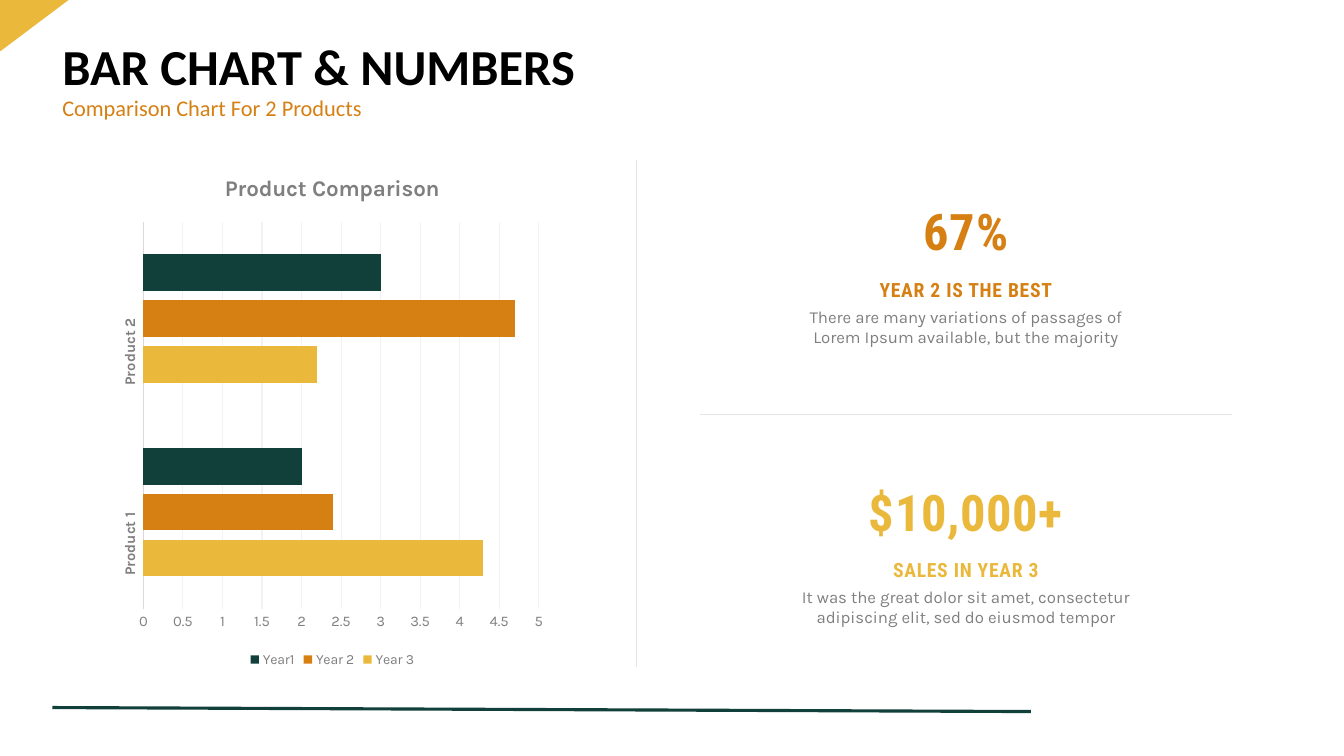
from dataclasses import dataclass

from lxml import etree
from pptx import Presentation
from pptx.chart.data import CategoryChartData
from pptx.dml.color import RGBColor
from pptx.enum.chart import XL_CHART_TYPE, XL_LEGEND_POSITION, XL_TICK_MARK
from pptx.enum.shapes import MSO_CONNECTOR, MSO_SHAPE
from pptx.enum.text import MSO_ANCHOR, MSO_AUTO_SIZE, PP_ALIGN
from pptx.oxml import parse_xml
from pptx.oxml.ns import nsdecls, qn
from pptx.util import Cm, Pt

BAR = XL_CHART_TYPE.BAR_CLUSTERED
LEGEND_BOTTOM = XL_LEGEND_POSITION.BOTTOM
NO_TICK = XL_TICK_MARK.NONE
STRAIGHT = MSO_CONNECTOR.STRAIGHT
RIGHT_TRIANGLE = MSO_SHAPE.RIGHT_TRIANGLE
MIDDLE, TOP = MSO_ANCHOR.MIDDLE, MSO_ANCHOR.TOP
NO_FIT = MSO_AUTO_SIZE.NONE
LEFT, CENTER = PP_ALIGN.LEFT, PP_ALIGN.CENTER

GREEN, ORANGE, YELLOW = "11403A", "D68013", "EAB83B"
BLACK, GREY, RULE_GREY = "000000", "7F7F7F", "E5E5E5"
AXIS_GREY, GRID_GREY = "D9D9D9", "F2F2F2"
TITLE_FONT, BODY_FONT, NUMBER_FONT = "Calibri", "Karla", "Roboto Condensed"


@dataclass
class Style:
    font: str
    size: float
    color: str
    bold: bool = False
    spacing: int = 0  # hundredths of a point


@dataclass
class Rule:
    x1: float
    y1: float
    x2: float
    y2: float
    color: str
    width: float


@dataclass
class Figure:
    top: float
    color: str
    number: str
    heading: str
    description: str


@dataclass
class Year:
    name: str
    sales: tuple[float, ...]
    color: str


RULES = [
    Rule(1.32, 17.83, 25.98, 17.93, GREEN, 2.25),
    Rule(16.03, 4.04, 16.03, 16.81, RULE_GREY, 0.5),
    Rule(17.65, 10.44, 31.04, 10.44, RULE_GREY, 0.5),
]
FIGURES = [
    Figure(4.93, ORANGE, "67%", "YEAR 2 IS THE BEST",
           "There are many variations of passages of Lorem Ipsum available, but the majority"),
    Figure(11.99, YELLOW, "$10,000+", "SALES IN YEAR 3",
           "It was the great dolor sit amet, consectetur adipiscing elit, sed do eiusmod tempor"),
]
YEARS = [
    Year("Year 3", (4.3, 2.2), YELLOW),
    Year("Year 2", (2.4, 4.7), ORANGE),
    Year("Year1", (2, 3), GREEN),
]


def rgb(color: str) -> RGBColor:
    return RGBColor.from_string(color)


def apply_style(font, style: Style) -> None:
    font.name = style.font
    font.size = Pt(style.size)
    font.bold = style.bold
    font.color.rgb = rgb(style.color)


def write(shape, text: str, style: Style, align=CENTER, anchor=TOP, line_spacing=1.0) -> None:
    frame = shape.text_frame
    frame.word_wrap = True
    frame.auto_size = NO_FIT
    frame.vertical_anchor = anchor
    paragraph = frame.paragraphs[0]
    paragraph.alignment = align
    paragraph.line_spacing = line_spacing
    run = paragraph.add_run()
    run.text = text
    if style.spacing:
        run._r.get_or_add_rPr().set("spc", str(style.spacing))
    apply_style(paragraph.font, style)


def add_text(slide, left: float, top: float, width: float, height: float,
             text: str, style: Style, **layout) -> None:
    box = slide.shapes.add_textbox(Cm(left), Cm(top), Cm(width), Cm(height))
    write(box, text, style, **layout)


def add_rule(slide, rule: Rule) -> None:
    line = slide.shapes.add_connector(
        STRAIGHT, Cm(rule.x1), Cm(rule.y1), Cm(rule.x2), Cm(rule.y2))
    line.line.color.rgb = rgb(rule.color)
    line.line.width = Pt(rule.width)
    etree.SubElement(line._element.spPr, qn("a:effectLst"))


def add_corner(slide) -> None:
    corner = slide.shapes.add_shape(RIGHT_TRIANGLE, 0, 0, Cm(1.73), Cm(1.3))
    corner.shadow.inherit = False
    corner.fill.solid()
    corner.fill.fore_color.rgb = rgb(YELLOW)
    corner.line.fill.background()
    corner._element.spPr.find(qn("a:xfrm")).set("flipV", "1")


def add_heading(slide) -> None:
    title = slide.shapes.title
    title.left, title.top, title.width, title.height = Cm(1.32), Cm(0.99), Cm(31.22), Cm(1.52)
    write(title, "BAR CHART & NUMBERS", Style(TITLE_FONT, 36, BLACK, True),
          align=LEFT, anchor=MIDDLE, line_spacing=0.9)
    add_text(slide, 1.32, 2.26, 31.22, 0.99, "Comparison Chart For 2 Products",
             Style(TITLE_FONT, 16, ORANGE), align=LEFT, anchor=MIDDLE, line_spacing=0.9)


def add_figure(slide, figure: Figure) -> None:
    number = Style(NUMBER_FONT, 36, figure.color, True, 50)
    heading = Style(NUMBER_FONT, 14, figure.color, True, 50)
    description = Style(BODY_FONT, 12, GREY)
    for offset, height, text, style in (
        (0, 1.8, figure.number, number),
        (1.95, 0.86, figure.heading, heading),
        (2.67, 1.27, figure.description, description),
    ):
        add_text(slide, 19.81, figure.top + offset, 9.07, height, text, style)


def fix_plot_area(chart, x: float, y: float, w: float, h: float) -> None:
    """Place the inner plot area, in fractions of the chart."""
    plot_area = chart._chartSpace.chart.plotArea
    for layout in plot_area.findall(qn("c:layout")):
        plot_area.remove(layout)
    plot_area.insert(0, parse_xml(
        f'<c:layout {nsdecls("c")}><c:manualLayout><c:layoutTarget val="inner"/>'
        '<c:xMode val="edge"/><c:yMode val="edge"/>'
        f'<c:x val="{x}"/><c:y val="{y}"/><c:w val="{w}"/><c:h val="{h}"/>'
        '</c:manualLayout></c:layout>'))


def add_comparison(slide) -> None:
    sales = CategoryChartData()
    sales.categories = ["Product 1", "Product 2"]
    for year in YEARS:
        sales.add_series(year.name, year.sales)
    chart = slide.shapes.add_chart(BAR, Cm(2.84), Cm(3.89), Cm(11.07), Cm(13.03), sales).chart
    apply_style(chart.font, Style(BODY_FONT, 10, BLACK))

    chart.has_title = True
    heading = chart.chart_title.text_frame.paragraphs[0]
    heading.add_run().text = "Product Comparison"
    apply_style(heading.font, Style(BODY_FONT, 16, GREY, True))
    chart.has_legend = True
    chart.legend.position = LEGEND_BOTTOM
    chart.legend.include_in_layout = False
    apply_style(chart.legend.font, Style(BODY_FONT, 10, GREY))

    products, values = chart.category_axis, chart.value_axis
    for axis, bold in ((products, True), (values, False)):
        axis.major_tick_mark = axis.minor_tick_mark = NO_TICK
        apply_style(axis.tick_labels.font, Style(BODY_FONT, 10.5, GREY, bold))
    products.format.line.color.rgb = rgb(AXIS_GREY)
    products.format.line.width = Pt(0.75)
    products._element.find(qn("c:txPr")).find(qn("a:bodyPr")).set("rot", "-5400000")
    values.format.line.fill.background()
    values.minimum_scale, values.maximum_scale, values.major_unit = 0, 5, 0.5
    values.tick_labels.number_format = "General"
    values.tick_labels.number_format_is_linked = False
    values.major_gridlines.format.line.color.rgb = rgb(GRID_GREY)
    values.major_gridlines.format.line.width = Pt(0.75)

    plot = chart.plots[0]
    plot.gap_width, plot.overlap, plot.vary_by_categories = 182, -27, False
    for series, year in zip(plot.series, YEARS):
        series.format.fill.solid()
        series.format.fill.fore_color.rgb = rgb(year.color)
    fix_plot_area(chart, 0.07, 0.13, 0.9, 0.75)


def main() -> None:
    deck = Presentation()
    deck.slide_width, deck.slide_height = Cm(33.87), Cm(19.05)
    slide = deck.slides.add_slide(deck.slide_layouts[5])
    add_corner(slide)
    add_heading(slide)
    add_comparison(slide)
    for rule in RULES:
        add_rule(slide, rule)
    for figure in FIGURES:
        add_figure(slide, figure)
    deck.save("out.pptx")


if __name__ == "__main__":
    main()
